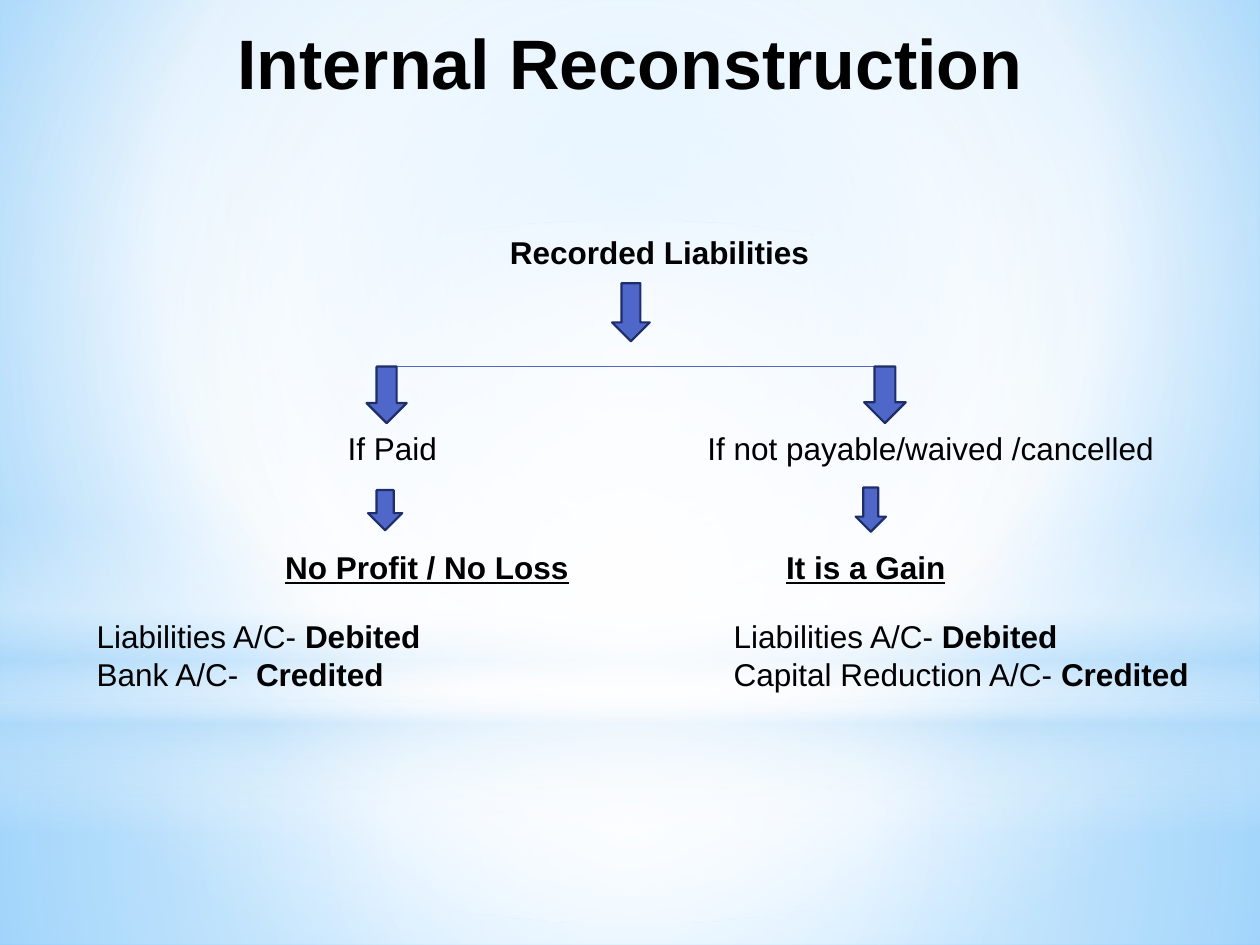
from dataclasses import dataclass

from lxml import etree
from pptx import Presentation
from pptx.dml.color import RGBColor
from pptx.enum import shapes, text
from pptx.oxml import parse_xml
from pptx.oxml import ns
from pptx.util import Cm, Pt


@dataclass(frozen=True)
class Theme:
    font: str = "Arial"
    ink: str = "000000"
    arrow: str = "4E67C8"
    edge: str = "1F2E69"
    sky: str = "B4DCFA"
    white: str = "FFFFFF"
    head: int = 40
    body: int = 18


@dataclass(frozen=True)
class Branch:
    case: str
    result: str
    case_x: float
    result_x: float
    top_arrow: tuple
    low_arrow: tuple
    entries: tuple


T = Theme()
MID = (50, 50, 50, 50)
KIND = shapes.MSO_SHAPE
WIDE, HIGH = 25.4, 19.05
ROW = 1.02


def rgb(code):
    return RGBColor.from_string(code)


def gradient(stops, focus=None):
    marks = "".join(
        f'<a:gs pos="{pos * 1000}"><a:srgbClr val="{code}">'
        f'<a:alpha val="{alpha * 1000}"/></a:srgbClr></a:gs>'
        for pos, code, alpha in stops
    )
    if focus:
        sides = " ".join(f'{s}="{v * 1000}"' for s, v in zip("ltrb", focus))
        way = f'<a:path path="circle"><a:fillToRect {sides}/></a:path>'
    else:
        way = '<a:lin ang="5400000" scaled="0"/>'
    return parse_xml(
        f'<a:gradFill {ns.nsdecls("a")} rotWithShape="1">'
        f"<a:gsLst>{marks}</a:gsLst>{way}</a:gradFill>"
    )


def swap(parent, grad):
    parent.replace(parent.find(ns.qn("a:solidFill")), grad)


def add_form(slide, kind, box):
    form = slide.shapes.add_shape(kind, *map(Cm, box))
    form.shadow.inherit = False
    form.fill.solid()
    return form


def add_glow(slide, kind, box, stops, focus=None):
    glow = add_form(slide, kind, box)
    glow.line.fill.background()
    swap(glow.element.spPr, gradient(stops, focus))


def add_sky(slide, box):
    x, y, w, h = box
    slide.background.fill.solid()
    back = slide.element.find(".//" + ns.qn("p:bgPr"))
    swap(back, gradient(
        [(0, "9ED5FF", 100), (60, T.white, 100), (100, "5BB9FF", 100)],
        (20, 10, 20, 60)))
    split = 14.17
    add_glow(slide, KIND.RECTANGLE, (x, y + split, w, h - split),
             [(0, T.white, 91), (37, T.white, 76), (100, T.sky, 79)], MID)
    add_glow(slide, KIND.RECTANGLE, (x, y, w, split),
             [(0, T.white, 89), (48, T.white, 62), (100, T.sky, 79)], MID)
    add_glow(slide, KIND.RECTANGLE, (x, y + 10.46, w, 6.35),
             [(0, T.white, 0), (29, T.white, 30), (45, T.sky, 40),
              (55, T.white, 26), (65, T.sky, 60), (100, T.white, 0)])
    add_glow(slide, KIND.OVAL, (x, y + 4.45, w, split),
             [(0, T.white, 100), (56, T.white, 0)], MID)


def style(font, size, bold=False, under=False):
    font.name = T.font
    font.size = Pt(size)
    font.bold = bold
    font.underline = under
    font.color.rgb = rgb(T.ink)


def add_title(slide, box, words):
    title = slide.shapes.title
    title.left, title.top, title.width, title.height = map(Cm, box)
    frame = title.text_frame
    frame.text = words
    frame.margin_top = Cm(0.25)
    frame.vertical_anchor = text.MSO_ANCHOR.TOP
    para = frame.paragraphs[0]
    para.alignment = text.PP_ALIGN.CENTER
    style(para.font, T.head, bold=True)
    title.element.getparent().append(title.element)


def add_text(slide, box, words, bold=False, under=False):
    frame = slide.shapes.add_textbox(*map(Cm, box)).text_frame
    frame.word_wrap = True
    frame.text = words
    style(frame.paragraphs[0].font, T.body, bold, under)


def add_entries(slide, box, entries):
    frame = slide.shapes.add_textbox(*map(Cm, box)).text_frame
    frame.word_wrap = True
    for i, (account, side) in enumerate(entries):
        para = frame.add_paragraph() if i else frame.paragraphs[0]
        style(para.font, T.body)
        para.add_run().text = account
        run = para.add_run()
        run.text = side
        run.font.bold = True


def add_arrow(slide, box):
    arrow = add_form(slide, KIND.DOWN_ARROW, box)
    arrow.fill.fore_color.rgb = rgb(T.arrow)
    arrow.line.color.rgb = rgb(T.edge)
    arrow.line.width = Pt(1.25)


def add_root(slide, box):
    x, y, w, h = box
    add_text(slide, (x, y, w, ROW), "Recorded Liabilities", bold=True)
    add_arrow(slide, (x + 2.31, y + 1.14, 0.76, h - 1.14))


def add_bar(slide, start, end, y):
    bar = slide.shapes.add_connector(
        shapes.MSO_CONNECTOR.STRAIGHT, Cm(start), Cm(y), Cm(end), Cm(y))
    bar.line.color.rgb = rgb(T.arrow)
    bar.line.width = Pt(0.75)
    etree.SubElement(bar.element.spPr, ns.qn("a:effectLst"))


def add_branch(slide, box, branch):
    x, y, w, h = box
    for dx, dy, aw, ah in (branch.top_arrow, branch.low_arrow):
        add_arrow(slide, (x + dx, y + dy, aw, ah))
    add_text(slide, (x + branch.case_x, y + 1.14, w - branch.case_x, ROW),
             branch.case)
    add_text(slide, (x + branch.result_x, y + 3.53, w - branch.result_x, ROW),
             branch.result, bold=True, under=True)
    add_entries(slide, (x, y + 4.93, w, h - 4.93), branch.entries)


PAID = Branch(
    "If Paid", "No Profit / No Loss", 5.06, 3.8,
    (5.69, 0, 0.81, 1.14), (5.72, 2.49, 0.69, 0.81),
    (("Liabilities A/C- ", "Debited"), ("Bank A/C-  ", "Credited")))
WAIVED = Branch(
    "If not payable/waived /cancelled", "It is a Gain", -0.53, 1.06,
    (2.88, 0, 0.84, 1.14), (2.71, 2.44, 0.61, 0.89),
    (("Liabilities A/C- ", "Debited"),
     ("Capital Reduction A/C- ", "Credited")))


def main():
    deck = Presentation()
    deck.slide_width, deck.slide_height = Cm(WIDE), Cm(HIGH)
    slide = deck.slides.add_slide(deck.slide_layouts[5])
    add_sky(slide, (0, 0, WIDE, HIGH))
    add_title(slide, (0.3, 0.15, 24.8, 2.57), "Internal Reconstruction")
    top = 7.39
    add_bar(slide, 7.67, 17.88, top)
    add_root(slide, (10.03, 4.57, 6.6, 2.31))
    add_branch(slide, (1.7, top, 10.8, 6.73), PAID)
    add_branch(slide, (14.54, top, 10.8, 6.73), WAIVED)
    deck.save("out.pptx")


if __name__ == "__main__":
    main()
